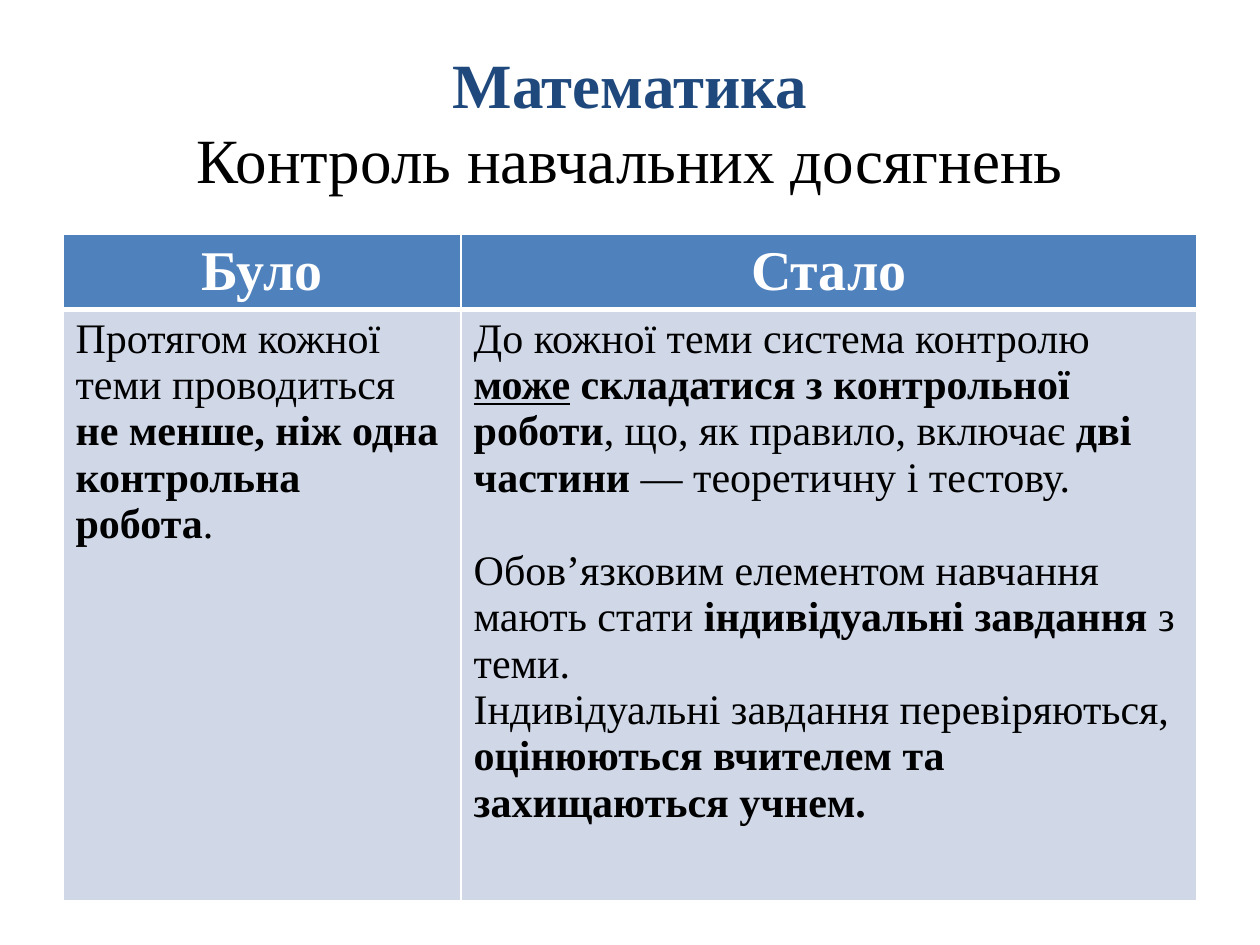
import pptx
import pptx.dml.color
import pptx.enum.text
import pptx.oxml
import pptx.oxml.ns
import pptx.util

Pt = pptx.util.Pt
RGB = pptx.dml.color.RGBColor
ALIGN = pptx.enum.text.PP_ALIGN
ANCHOR = pptx.enum.text.MSO_ANCHOR
FIT = pptx.enum.text.MSO_AUTO_SIZE

NAVY = RGB(0x1F, 0x49, 0x7D)
BLUE = RGB(0x4F, 0x81, 0xBD)
PALE = RGB(0xD0, 0xD8, 0xE8)
BLACK = RGB(0, 0, 0)
WHITE = RGB(0xFF, 0xFF, 0xFF)

FONT = "Times New Roman"
BOLD = {"bold": True}
HEAD = {"size": Pt(32), "bold": True}
BODY = {"size": Pt(24), "bold": False}

TITLE = [("Математика", NAVY, True),
         ("Контроль навчальних досягнень", BLACK, False)]
HEADS = ["Було", "Стало"]
# Each cell holds paragraphs: (space before, runs).
CELLS = [
    [(0, [("Протягом кожної теми проводиться ", {}),
          ("не менше, ніж одна контрольна робота", BOLD),
          (".", {})])],
    [(0, [("До кожної теми система контролю ", {}),
          ("може", {"bold": True, "underline": True}),
          (" ", {}),
          ("складатися з контрольної роботи", BOLD),
          (", що, як правило, включає ", {}),
          ("дві частини", BOLD),
          (" — теоретичну і тестову.", {})]),
     (26.5, [("Обов’язковим елементом навчання мають стати ", {}),
             ("індивідуальні завдання ", BOLD),
             ("з теми.", {})]),
     (0, [("Індивідуальні завдання перевіряються, ", {}),
          ("оцінюються вчителем та захищаються учнем.", BOLD)])],
]


def add_run(para, text, color, form):
    run = para.add_run()
    run.text = text
    run.font.name = FONT
    run.font.color.rgb = color
    for name, value in form.items():
        setattr(run.font, name, value)


def place(shape, box):
    for name, value in zip(("left", "top", "width", "height"), box):
        setattr(shape, name, Pt(value))


def add_title(slide, box):
    shape = slide.shapes.title
    place(shape, box)
    frame = shape.text_frame
    form = {"word_wrap": True, "auto_size": FIT.NONE,
            "vertical_anchor": ANCHOR.MIDDLE}
    for name, value in form.items():
        setattr(frame, name, value)
    para = frame.paragraphs[0]
    para.alignment = ALIGN.CENTER
    for i, (text, color, bold) in enumerate(TITLE):
        if i:
            para.add_line_break()
        add_run(para, text, color, {"size": Pt(36), "bold": bold})


def paint(cell, color, edges):
    """Give the cell white borders, then its fill."""
    props = cell._tc.get_or_add_tcPr()
    for side, width in edges.items():
        props.append(pptx.oxml.parse_xml(
            f'<a:ln{side} {pptx.oxml.ns.nsdecls("a")} w="{Pt(width)}">'
            f'<a:solidFill><a:srgbClr val="{WHITE}"/></a:solidFill>'
            f'</a:ln{side}>'))
    cell.fill.solid()
    cell.fill.fore_color.rgb = color


def add_grid(slide, box, split, head):
    """Place the table; split is the first column's width."""
    left, top, width, height = box
    table = slide.shapes.add_table(2, 2, *map(Pt, box)).table
    for col, size in zip(table.columns, (split, width - split)):
        col.width = Pt(size)
    for row, size in zip(table.rows, (head, height - head)):
        row.height = Pt(size)
    for i, (text, paras) in enumerate(zip(HEADS, CELLS)):
        cell = table.cell(0, i)
        paint(cell, BLUE, {"L": 1, "R": 1, "T": 1, "B": 3})
        para = cell.text_frame.paragraphs[0]
        para.alignment = ALIGN.CENTER
        add_run(para, text, WHITE, HEAD)

        cell = table.cell(1, i)
        paint(cell, PALE, {"L": 1, "R": 1, "T": 3, "B": 1})
        frame = cell.text_frame
        for j, (gap, runs) in enumerate(paras):
            para = frame.add_paragraph() if j else frame.paragraphs[0]
            para.space_before = Pt(gap)
            for text, form in runs:
                add_run(para, text, BLACK, BODY | form)


def main():
    deck = pptx.Presentation()
    deck.slide_width, deck.slide_height = Pt(720), Pt(540)
    slide = deck.slides.add_slide(deck.slide_layouts[5])
    add_title(slide, (36, 21.6, 648, 95))
    add_grid(slide, (36, 134, 648, 380), 227.5, 42)
    deck.save("out.pptx")


if __name__ == "__main__":
    main()
